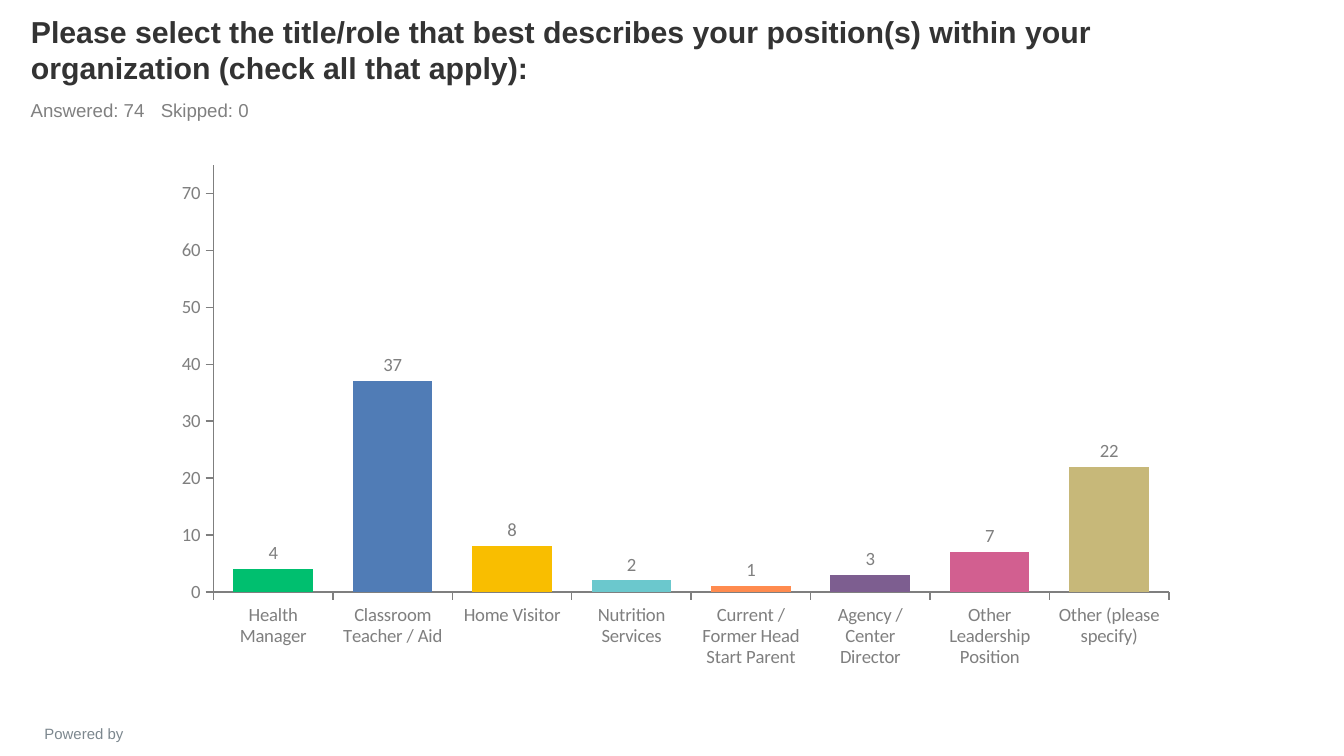
from lxml import etree
from pptx import Presentation
from pptx import util as u
from pptx.chart.data import CategoryChartData
from pptx.dml.color import RGBColor
from pptx.enum import chart as ch, text
from pptx.oxml.ns import qn

QUESTION = ("Please select the title/role that best describes your position(s) "
            "within your organization (check all that apply):")
RESPONSES = "Answered: 74\tSkipped: 0"
CREDIT = "Powered by"
ROLES = [
    ("Health Manager", 4, RGBColor(0x00, 0xBF, 0x6F)),
    ("Classroom Teacher / Aid", 37, RGBColor(0x50, 0x7C, 0xB6)),
    ("Home Visitor", 8, RGBColor(0xF9, 0xBE, 0x00)),
    ("Nutrition Services", 2, RGBColor(0x6B, 0xC8, 0xCD)),
    ("Current / Former Head Start Parent", 1, RGBColor(0xFF, 0x8B, 0x4F)),
    ("Agency / Center Director", 3, RGBColor(0x7D, 0x5E, 0x90)),
    ("Other Leadership Position", 7, RGBColor(0xD2, 0x5F, 0x90)),
    ("Other (please specify)", 22, RGBColor(0xC7, 0xB8, 0x79)),
]
INK = RGBColor(0x33, 0x33, 0x33)
GRAY = RGBColor(0x80, 0x80, 0x80)
AXIS_GRAY = RGBColor(0x7F, 0x7F, 0x7F)
CREDIT_GRAY = RGBColor(0x7C, 0x87, 0x8E)

LEFT, WIDTH = 9.36, 648
TITLE_TOP, TITLE_HEIGHT = 6.48, 43.2
SKIPPED_TAB = 69.7


def style(font, size, color, name="Arial", bold=False):
    font.size, font.name, font.bold = u.Pt(size), name, bold
    font.color.rgb = color


def place(box, left, top, width, height):
    box.left, box.top = u.Pt(left), u.Pt(top)
    box.width, box.height = u.Pt(width), u.Pt(height)


def write(box, wording, size, color, bold=False, align=text.PP_ALIGN.LEFT,
          anchor=text.MSO_ANCHOR.TOP):
    frame = box.text_frame
    frame.text = wording
    frame.word_wrap = True
    frame.auto_size = text.MSO_AUTO_SIZE.NONE
    frame.vertical_anchor = anchor
    line = frame.paragraphs[0]
    line.alignment = align
    line.line_spacing = 1.0
    line.space_before = u.Pt(0)
    for run in line.runs:
        style(run.font, size, color, bold=bold)
    return line


def style_axis(axis, number_format):
    axis.has_major_gridlines = False
    axis.major_tick_mark = ch.XL_TICK_MARK.OUTSIDE
    axis.minor_tick_mark = ch.XL_TICK_MARK.NONE
    axis.tick_label_position = ch.XL_TICK_LABEL_POSITION.LOW
    axis.tick_labels.number_format = number_format
    axis.tick_labels.number_format_is_linked = False
    style(axis.tick_labels.font, 10, AXIS_GRAY, "Calibri")
    axis.format.line.color.rgb = AXIS_GRAY
    axis.format.line.width = u.Pt(0.75)


deck = Presentation()
deck.slide_width, deck.slide_height = u.Pt(720), u.Pt(405)
slide = deck.slides.add_slide(deck.slide_layouts[5])

title = slide.shapes.title
place(title, LEFT, TITLE_TOP, WIDTH, TITLE_HEIGHT)
write(title, QUESTION, 16.2, INK, bold=True, anchor=text.MSO_ANCHOR.BOTTOM)

responses = slide.shapes.add_textbox(
    u.Pt(LEFT), u.Pt(TITLE_TOP + TITLE_HEIGHT), u.Pt(WIDTH), u.Pt(18.72))
counts = write(responses, RESPONSES, 10, GRAY)
tabs = etree.SubElement(counts._p.get_or_add_pPr(), qn("a:tabLst"))
etree.SubElement(tabs, qn("a:tab"), pos=str(u.Pt(SKIPPED_TAB)), algn="l")

credit = slide.shapes.add_textbox(u.Pt(3.6), u.Pt(384.48), u.Pt(82.8), u.Pt(12.96))
write(credit, CREDIT, 8, CREDIT_GRAY, align=text.PP_ALIGN.CENTER)

answers = CategoryChartData(number_format="0")
answers.categories = [role for role, _, _ in ROLES]
answers.add_series("Series 1", [count for _, count, _ in ROLES])
chart = slide.shapes.add_chart(
    ch.XL_CHART_TYPE.COLUMN_CLUSTERED,
    u.Pt(86.4), u.Pt(82.8), u.Pt(550.8), u.Pt(280.8), answers).chart
chart.has_legend = chart.has_title = False
style(chart.font, 18, INK, "Calibri")

style_axis(chart.category_axis, "General")
style_axis(chart.value_axis, "0")
chart.value_axis.minimum_scale, chart.value_axis.maximum_scale = 0, 75
chart.value_axis.major_unit = 10

plot = chart.plots[0]
plot.gap_width, plot.overlap = 50, 100
plot.vary_by_categories = False
bars = plot.series[0]
bars.format.fill.solid()
bars.format.fill.fore_color.rgb = ROLES[0][2]
for index, (_, _, color) in enumerate(ROLES):
    fill = bars.points[index].format.fill
    fill.solid()
    fill.fore_color.rgb = color

labels = bars.data_labels
labels.show_value = True
labels.number_format, labels.number_format_is_linked = "0", False
labels.position = ch.XL_LABEL_POSITION.OUTSIDE_END
style(labels.font, 10, AXIS_GRAY, "Calibri")

deck.save("out.pptx")
